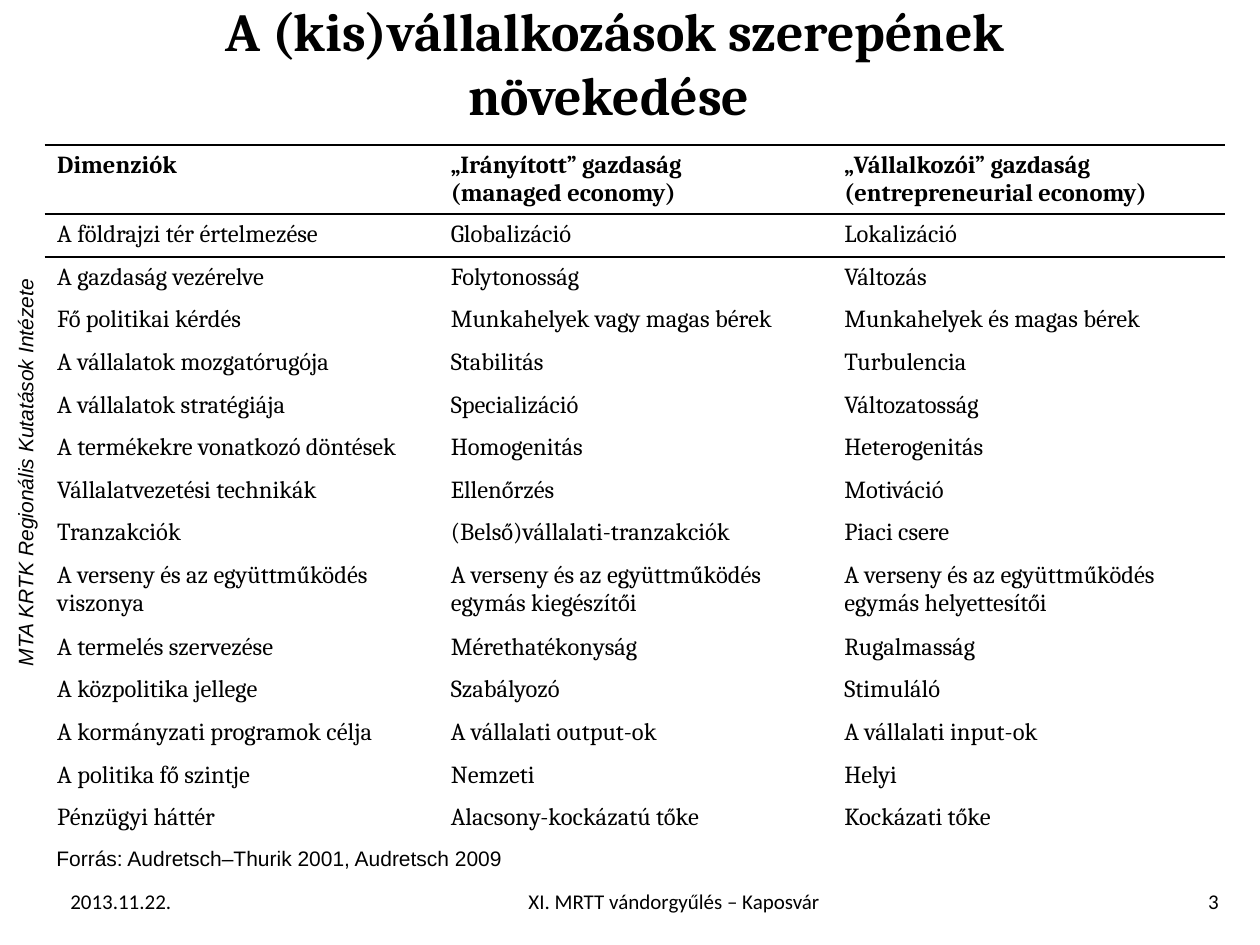
from lxml import etree
from pptx import Presentation
from pptx import util as u
from pptx.dml.color import RGBColor
from pptx.enum import text
from pptx.oxml import ns

Pt = u.Pt
LEFT, CENTER, RIGHT = text.PP_ALIGN.LEFT, text.PP_ALIGN.CENTER, text.PP_ALIGN.RIGHT
TOP, MIDDLE = text.MSO_ANCHOR.TOP, text.MSO_ANCHOR.MIDDLE
BLACK = "000000"


def set_color(fmt, value):
    fmt.rgb = RGBColor.from_string(value)


def format_text(tf, value, align=LEFT, **font):
    tf.text = value
    for p in tf.paragraphs:
        p.alignment = align
        for r in p.runs:
            for name, setting in font.items():
                setattr(r.font, name, setting)
            set_color(r.font.color, BLACK)


prs = Presentation()
prs.slide_width, prs.slide_height = Pt(720), Pt(540)
s = prs.slides.add_slide(prs.slide_layouts[5])

# Title
sp = s.shapes.title
sp.left, sp.top, sp.width, sp.height = Pt(76.3), Pt(0), Pt(550), Pt(71.3)
tf = sp.text_frame
tf.word_wrap, tf.auto_size, tf.vertical_anchor = True, text.MSO_AUTO_SIZE.NONE, MIDDLE
format_text(tf, "A (kis)vállalkozások szerepének növekedése ", CENTER,
            name="Cambria", size=Pt(30.6), bold=True)

# Comparison table
rows = [
    ("Dimenziók", "„Irányított” gazdaság \v(managed economy)",
     "„Vállalkozói” gazdaság (entrepreneurial economy)"),
    ("A földrajzi tér értelmezése", "Globalizáció", "Lokalizáció"),
    ("A gazdaság vezérelve", "Folytonosság", "Változás"),
    ("Fő politikai kérdés", "Munkahelyek vagy magas bérek", "Munkahelyek és magas bérek"),
    ("A vállalatok mozgatórugója", "Stabilitás", "Turbulencia"),
    ("A vállalatok stratégiája", "Specializáció", "Változatosság"),
    ("A termékekre vonatkozó döntések", "Homogenitás", "Heterogenitás"),
    ("Vállalatvezetési technikák", "Ellenőrzés", "Motiváció"),
    ("Tranzakciók", "(Belső)vállalati-tranzakciók", "Piaci csere"),
    ("A verseny és az együttműködés viszonya",
     "A verseny és az együttműködés egymás kiegészítői",
     "A verseny és az együttműködés egymás helyettesítői"),
    ("A termelés szervezése", "Mérethatékonyság", "Rugalmasság"),
    ("A közpolitika jellege", "Szabályozó", "Stimuláló"),
    ("A kormányzati programok célja", "A vállalati output-ok", "A vállalati input-ok"),
    ("A politika fő szintje", "Nemzeti", "Helyi"),
    ("Pénzügyi háttér", "Alacsony-kockázatú tőke", "Kockázati tőke"),
]
heights = {0: 39.6, 9: 41}
table = s.shapes.add_table(len(rows), 3, Pt(25.5), Pt(82.8), Pt(674.7), Pt(398)).table
table.first_row = table.horz_banding = False
NO_STYLE = "{2D5ABB26-0587-4C30-8999-92F81FD0307C}"
table._tbl.tblPr.find(ns.qn("a:tableStyleId")).text = NO_STYLE
for column in table.columns:
    column.width = Pt(224.9)
for i, values in enumerate(rows):
    table.rows[i].height = Pt(heights.get(i, 24.35))
    for j, value in enumerate(values):
        cell = table.cell(i, j)
        format_text(cell.text_frame, value, name="Cambria", size=Pt(14), bold=i == 0)
        # Rules above and below the header row
        for side in {0: ("lnT", "lnB"), 1: ("lnT",)}.get(i, ()):
            ln = etree.SubElement(cell._tc.get_or_add_tcPr(), ns.qn("a:" + side), w=str(Pt(1)))
            fill = etree.SubElement(ln, ns.qn("a:solidFill"))
            etree.SubElement(fill, ns.qn("a:srgbClr"), val=BLACK)
        cell.fill.background()

# Side label, source and footer: text, box, alignment, anchor, wrap, rotation, font
labels = [
    ("MTA KRTK Regionális Kutatások Intézete", (-255.6, 259.2, 540, 21.6),
     CENTER, TOP, True, 270, {"name": "Arial", "italic": True}),
    ("Forrás: Audretsch–Thurik 2001, Audretsch 2009", (25.2, 479.8, 271.4, 21.6),
     LEFT, TOP, False, 0, {"name": "Arial"}),
    ("2013.11.22.", (33.1, 500.5, 77, 28.8), LEFT, MIDDLE, True, 0, {"name": "Calibri"}),
    ("XI. MRTT vándorgyűlés – Kaposvár", (115.9, 500.5, 538.6, 28.8),
     CENTER, MIDDLE, True, 0, {"name": "Calibri"}),
    ("3", (654.5, 500.5, 49, 28.8), RIGHT, MIDDLE, True, 0, {"name": "Calibri"}),
]
for value, box, align, anchor, wrap, rotation, font in labels:
    sp = s.shapes.add_textbox(*map(Pt, box))
    sp.rotation = rotation
    tf = sp.text_frame
    tf.word_wrap, tf.vertical_anchor = wrap, anchor
    format_text(tf, value, align, size=Pt(12), **font)

prs.save("out.pptx")
